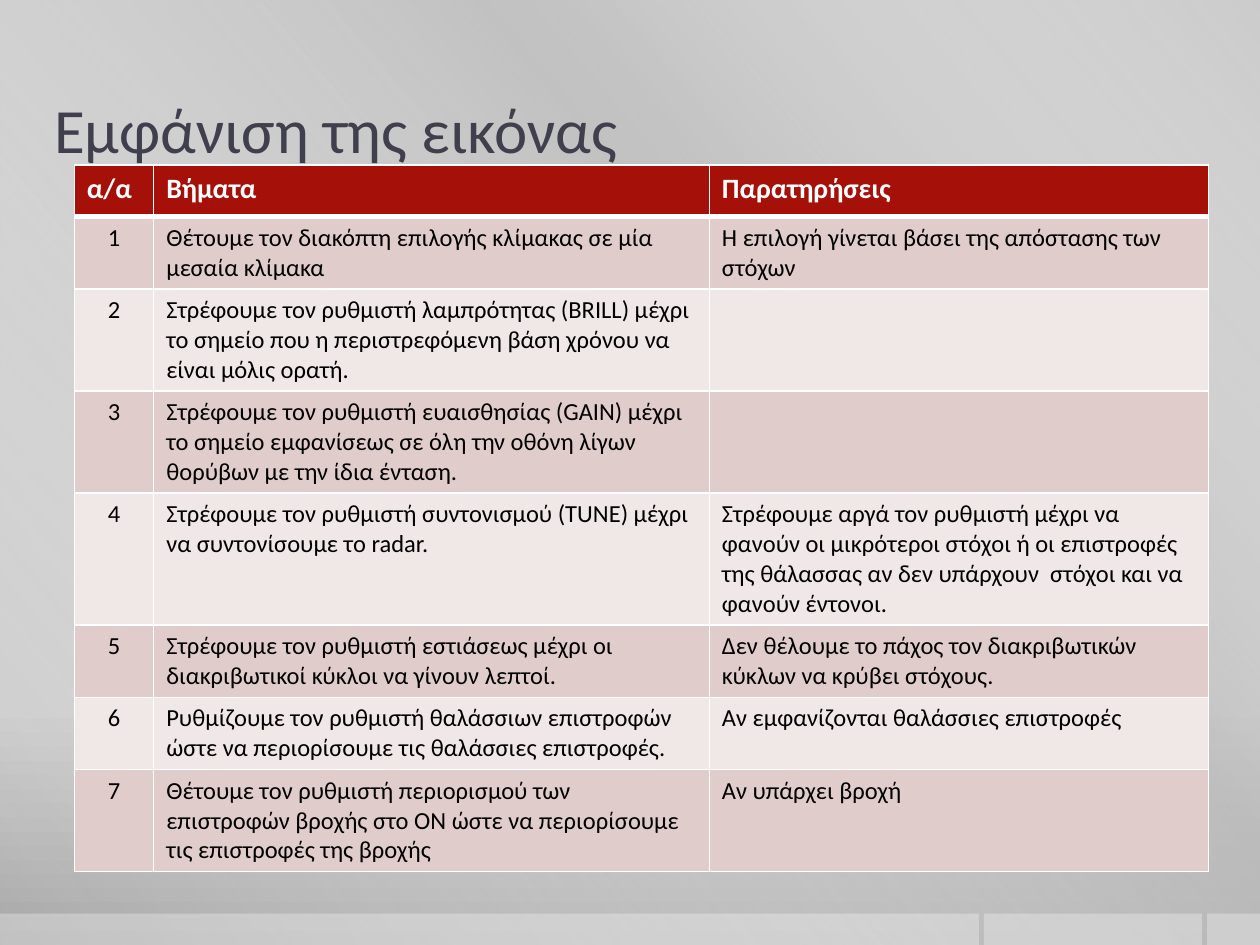
from dataclasses import dataclass

from lxml import etree
from pptx import Presentation
from pptx import util as u
from pptx.dml.color import RGBColor
from pptx.enum import shapes, text
from pptx.oxml.ns import qn

WIDTH, HEIGHT = u.Inches(10), u.Inches(7.5)
FONT = "Calibri"
WHITE = RGBColor(0xFF, 0xFF, 0xFF)
BLACK = RGBColor(0x00, 0x00, 0x00)
SLATE = RGBColor(0x3F, 0x3F, 0x4D)
RED = RGBColor(0xA5, 0x10, 0x09)
ROSE = RGBColor(0xE1, 0xCC, 0xCC)
PALE_ROSE = RGBColor(0xF0, 0xE7, 0xE7)
LIGHT_GRAY = RGBColor(0xCB, 0xCB, 0xCB)
MID_GRAY = RGBColor(0xC8, 0xC8, 0xC8)
DARK_GRAY = RGBColor(0xA7, 0xA7, 0xA7)
SHEEN_GRAY = RGBColor(0xBF, 0xBF, 0xBF)


@dataclass(frozen=True)
class Stop:
    position: int  # percent
    color: RGBColor
    opacity: int = 100  # percent


@dataclass(frozen=True)
class Bar:
    left: float  # share of the slide width
    width: float


@dataclass(frozen=True)
class Step:
    action: str
    remark: str = ""


BACKGROUND = (Stop(0, LIGHT_GRAY), Stop(76, MID_GRAY), Stop(100, DARK_GRAY))
SHEEN = (Stop(0, WHITE, 0), Stop(34, SHEEN_GRAY, 61),
         Stop(38, SHEEN_GRAY, 76), Stop(100, WHITE, 0))
BAR_TOP = 7.25 / 7.5
BARS = (Bar(0.958, 0.042), Bar(0.781, 0.173), Bar(0, 0.777))

HEADINGS = ("α/α", "Βήματα", "Παρατηρήσεις")
COLUMN_SHARES = (0.07, 0.49, 0.44)
STEPS = (
    Step("Θέτουμε τον διακόπτη επιλογής κλίμακας σε μία μεσαία κλίμακα",
         "Η επιλογή γίνεται βάσει της απόστασης των στόχων"),
    Step("Στρέφουμε τον ρυθμιστή λαμπρότητας (BRILL) μέχρι το σημείο που η "
         "περιστρεφόμενη βάση χρόνου να είναι μόλις ορατή."),
    Step("Στρέφουμε τον ρυθμιστή ευαισθησίας (GAIN) μέχρι το σημείο "
         "εμφανίσεως σε όλη την οθόνη λίγων θορύβων με την ίδια ένταση."),
    Step("Στρέφουμε τον ρυθμιστή συντονισμού (TUNE) μέχρι να συντονίσουμε "
         "το radar.",
         "Στρέφουμε αργά τον ρυθμιστή μέχρι να φανούν οι μικρότεροι στόχοι ή "
         "οι επιστροφές της θάλασσας αν δεν υπάρχουν  στόχοι και να φανούν "
         "έντονοι."),
    Step("Στρέφουμε τον ρυθμιστή εστιάσεως μέχρι οι διακριβωτικοί κύκλοι να "
         "γίνουν λεπτοί.",
         "Δεν θέλουμε το πάχος τον διακριβωτικών κύκλων να κρύβει στόχους."),
    Step("Ρυθμίζουμε τον ρυθμιστή θαλάσσιων επιστροφών ώστε να περιορίσουμε "
         "τις θαλάσσιες επιστροφές.",
         "Αν εμφανίζονται θαλάσσιες επιστροφές"),
    Step("Θέτουμε τον ρυθμιστή περιορισμού των επιστροφών βροχής στο ON ώστε "
         "να περιορίσουμε τις επιστροφές της βροχής",
         "Αν υπάρχει βροχή"),
)


def add_color(parent, color: RGBColor, opacity: int = 100) -> None:
    node = etree.SubElement(parent, qn("a:srgbClr"), val=str(color))
    if opacity < 100:
        etree.SubElement(node, qn("a:alpha"), val=str(opacity * 1000))


def set_gradient(owner, fill, stops: tuple[Stop, ...], angle: int) -> None:
    fill.gradient()
    gradient = next(owner.element.iter(qn("a:gradFill")))
    for child in list(gradient):
        gradient.remove(child)
    stop_list = etree.SubElement(gradient, qn("a:gsLst"))
    for stop in stops:
        node = etree.SubElement(stop_list, qn("a:gs"),
                                pos=str(stop.position * 1000))
        add_color(node, stop.color, stop.opacity)
    etree.SubElement(gradient, qn("a:lin"), ang=str(angle * 60000), scaled="0")


def add_panel(page, left: float, top: float, width: float, height: float):
    """Add an unlined rectangle, placed by shares of the slide's size."""
    panel = page.shapes.add_shape(
        shapes.MSO_SHAPE.RECTANGLE, int(WIDTH * left), int(HEIGHT * top),
        int(WIDTH * width), int(HEIGHT * height))
    panel.shadow.inherit = False
    panel.line.fill.background()
    return panel


def add_span(para, words: str, size: int, color: RGBColor, bold: bool) -> None:
    span = para.add_run()
    span.text = words
    span.font.name = FONT
    span.font.size = u.Pt(size)
    span.font.color.rgb = color
    span.font.bold = bold


def set_borders(cell, bottom: int) -> None:
    properties = cell._tc.get_or_add_tcPr()
    for side, points in (("L", 1), ("R", 1), ("T", 1), ("B", bottom)):
        line = etree.SubElement(properties, qn(f"a:ln{side}"),
                                w=str(u.Pt(points)))
        add_color(etree.SubElement(line, qn("a:solidFill")), WHITE)


def draw_backdrop(page) -> None:
    set_gradient(page, page.background.fill, BACKGROUND, 90)
    sheen = add_panel(page, 0, 0, 1, 1)
    set_gradient(sheen, sheen.fill, SHEEN, 140)
    for bar in BARS:
        panel = add_panel(page, bar.left, BAR_TOP, bar.width, 1 - BAR_TOP)
        panel.fill.solid()
        panel.fill.fore_color.rgb = WHITE
        color = panel.element.spPr.find(".//" + qn("a:srgbClr"))
        etree.SubElement(color, qn("a:alpha"), val="30000")


def draw_title(page) -> None:
    title = page.shapes.title
    page.shapes.element.append(title.element)  # in front of the backdrop
    title.left, title.top = u.Inches(0.43), u.Inches(0.52)
    title.width, title.height = u.Inches(9), u.Inches(1)
    frame = title.text_frame
    frame.word_wrap = True
    frame.auto_size = text.MSO_AUTO_SIZE.NONE
    frame.vertical_anchor = text.MSO_ANCHOR.MIDDLE
    frame.margin_left = frame.margin_right = 0
    para = frame.paragraphs[0]
    para.alignment = text.PP_ALIGN.LEFT
    add_span(para, "Εμφάνιση της εικόνας", 36, SLATE, False)


def draw_table(page) -> None:
    rows = [HEADINGS] + [(str(number), step.action, step.remark)
                         for number, step in enumerate(STEPS, 1)]
    width, height = u.Inches(9), u.Inches(5.54)
    holder = page.shapes.add_table(len(rows), len(HEADINGS), u.Inches(0.59),
                                   u.Inches(1.31), width, height)
    table = holder.table
    for column, share in zip(table.columns, COLUMN_SHARES):
        column.width = int(width * share)
    for row in table.rows:
        row.height = u.Inches(0.41)  # rows grow with their text
    holder.height = height

    for row_index, words in enumerate(rows):
        heading = row_index == 0
        fill = RED if heading else (PALE_ROSE, ROSE)[row_index % 2]
        size, color = (16, WHITE) if heading else (14, BLACK)
        for column_index, entry in enumerate(words):
            cell = table.cell(row_index, column_index)
            set_borders(cell, 3 if heading else 1)
            cell.fill.solid()
            cell.fill.fore_color.rgb = fill
            para = cell.text_frame.paragraphs[0]
            if column_index == 0 and not heading:
                para.alignment = text.PP_ALIGN.CENTER
            if entry:
                add_span(para, entry, size, color, heading)
            else:
                para.font.size = u.Pt(size)


def main() -> None:
    deck = Presentation()
    deck.slide_width, deck.slide_height = WIDTH, HEIGHT
    page = deck.slides.add_slide(deck.slide_layouts.get_by_name("Title Only"))
    draw_backdrop(page)
    draw_title(page)
    draw_table(page)
    deck.save("out.pptx")


if __name__ == "__main__":
    main()
